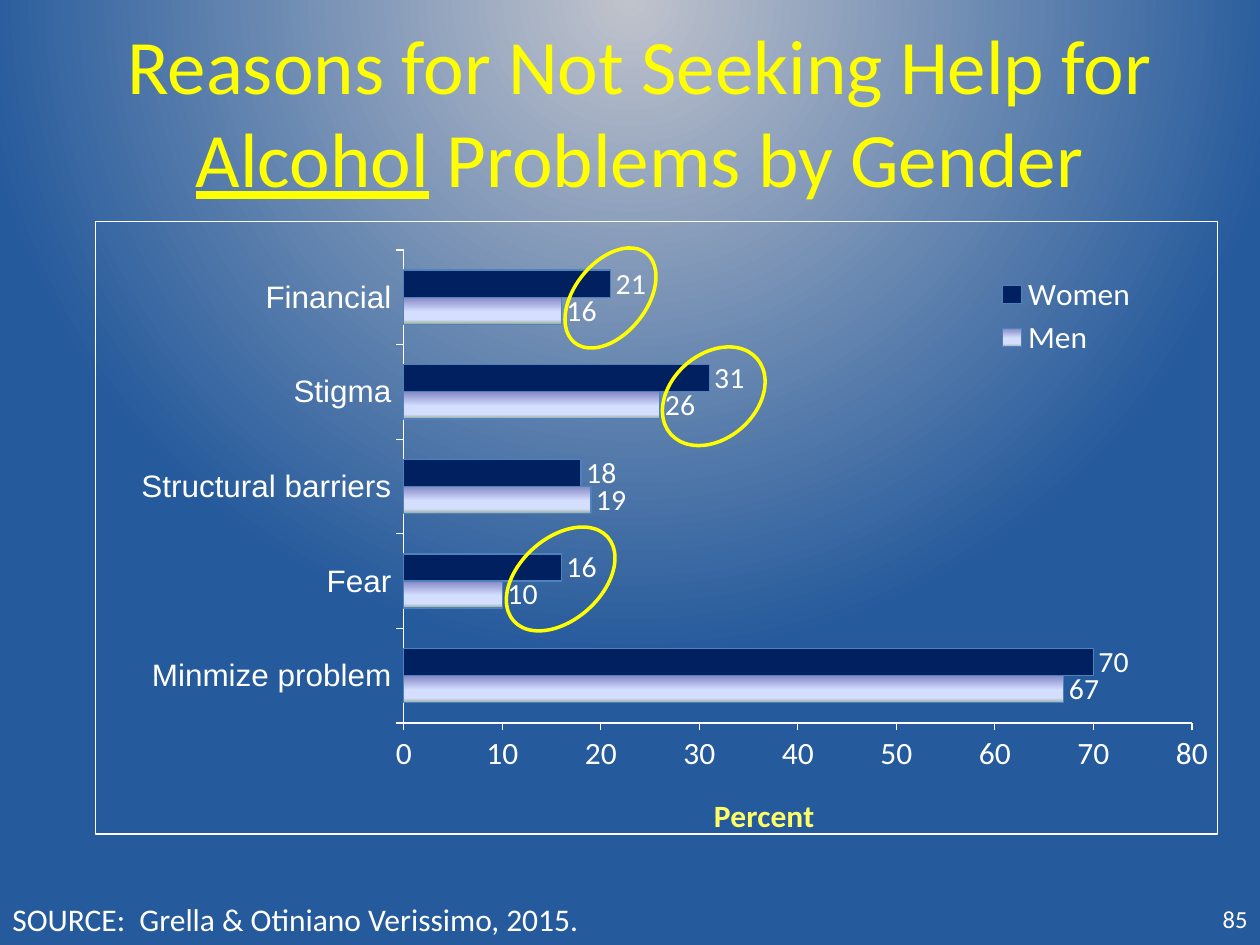
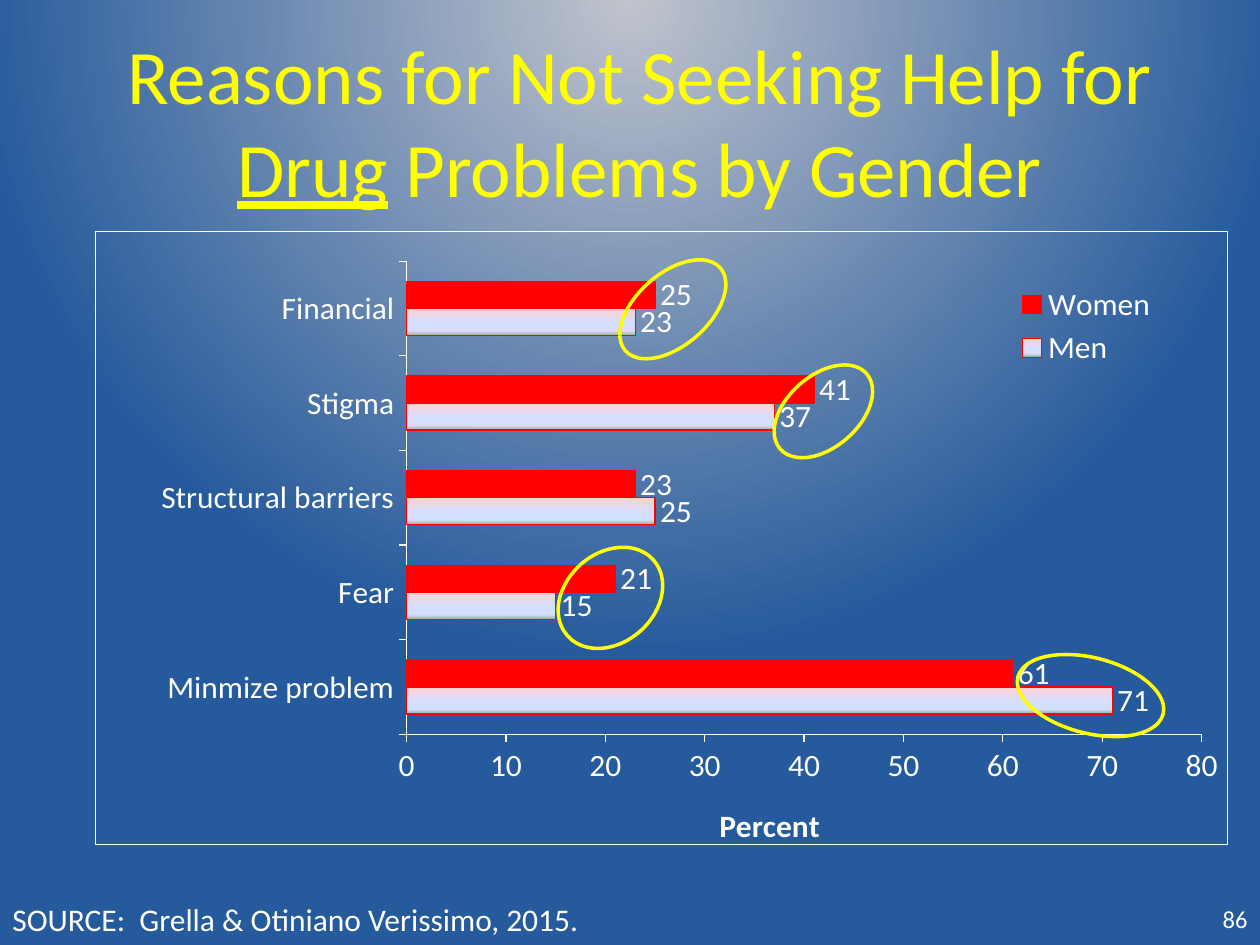
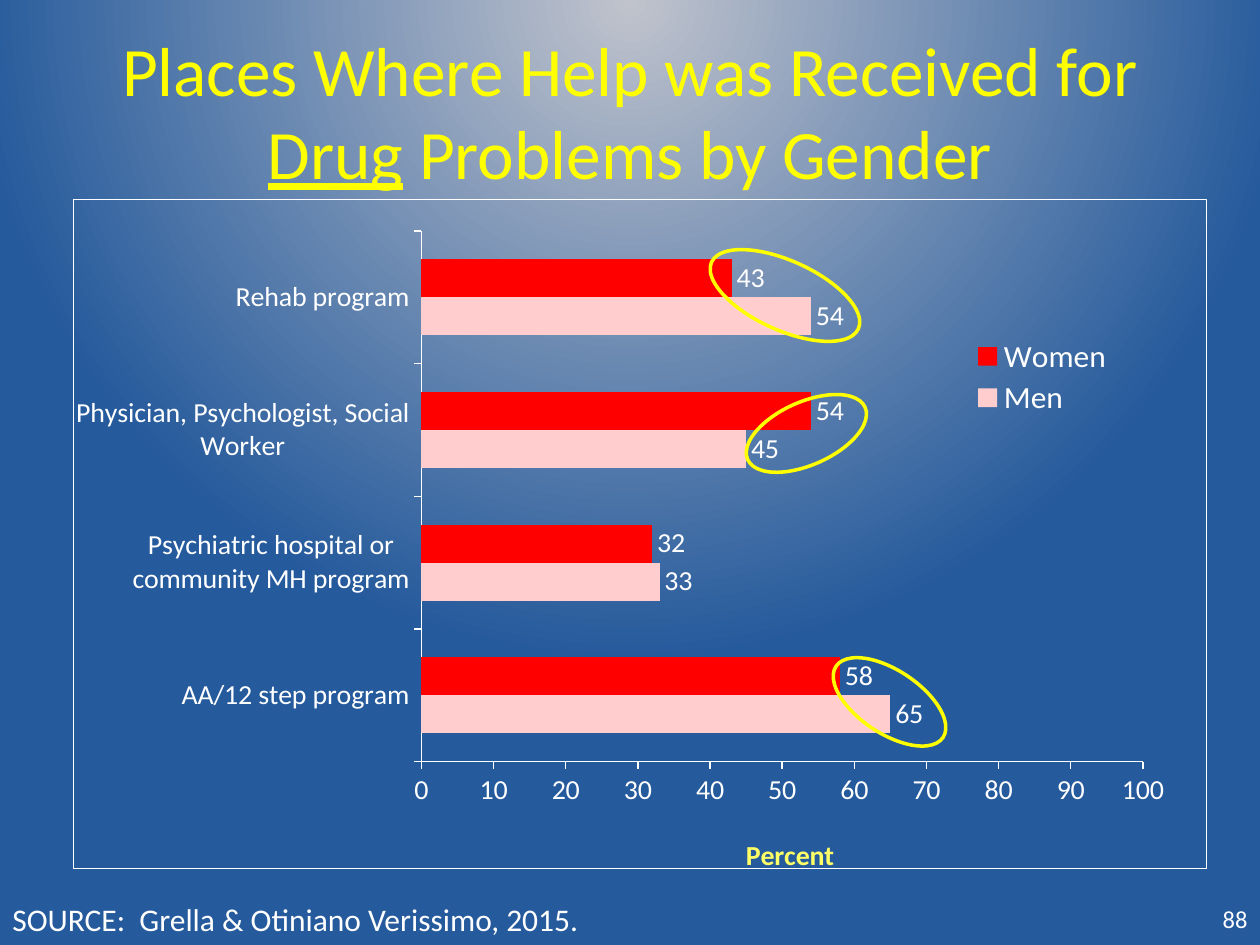
from lxml import etree
from pptx import Presentation
from pptx.chart.data import CategoryChartData
from pptx.dml.color import RGBColor
from pptx.enum.chart import XL_CHART_TYPE, XL_LABEL_POSITION, XL_LEGEND_POSITION, XL_TICK_MARK
from pptx.enum.shapes import MSO_SHAPE
from pptx.enum.text import MSO_ANCHOR, PP_ALIGN
from pptx.oxml import parse_xml
from pptx.oxml.ns import nsdecls, qn
from pptx.util import Inches, Pt

BAR_CLUSTERED = XL_CHART_TYPE.BAR_CLUSTERED
OUTSIDE_END = XL_LABEL_POSITION.OUTSIDE_END
LEGEND_RIGHT = XL_LEGEND_POSITION.RIGHT
TICK_OUTSIDE = XL_TICK_MARK.OUTSIDE
TICK_NONE = XL_TICK_MARK.NONE
ELLIPSE = MSO_SHAPE.OVAL
TOP, MIDDLE = MSO_ANCHOR.TOP, MSO_ANCHOR.MIDDLE
LEFT, CENTER, RIGHT = PP_ALIGN.LEFT, PP_ALIGN.CENTER, PP_ALIGN.RIGHT

COLORS = {
    "white": "FFFFFF",
    "yellow": "FFFF00",
    "pale_yellow": "FFFF66",
    "glow": "C0C3CC",
    "blue": "255A9C",
    "navy": "002060",
    "bar_edge": "4F81BD",
    "red": "FF0000",
    "pink": "FFCDCD",
    "violet": "8488C4",
    "rose": "FFD1D1",
    "lavender": "D4DEFF",
    "sage": "96AB94",
}
BACKGROUND_STOPS = [(0, "glow"), (84, "blue"), (100, "blue")]
RADIAL = (
    '<a:path {} path="circle"><a:fillToRect l="50000" t="-80000" r="50000" b="180000"/></a:path>'
)
VERTICAL = '<a:lin {} ang="5400000" scaled="1"/>'
SOURCE = "SOURCE:  Grella & Otiniano Verissimo, 2015."
REASONS = ["Minmize problem", "Fear", "Structural barriers", "Stigma", "Financial"]
PLACES = [
    "AA/12 step program",
    "Psychiatric hospital or community MH program",
    "Physician, Psychologist, Social Worker",
    "Rehab program",
]


def rgb(name):
    return RGBColor.from_string(COLORS[name])


def bar_stops(first):
    return [(0, first), (53, "lavender"), (83, "lavender"), (100, "sage")]


def paint_gradient(owner, stops, direction):
    gradient = owner.find(".//" + qn("a:gradFill"))
    for child in list(gradient):
        gradient.remove(child)
    stop_list = etree.SubElement(gradient, qn("a:gsLst"))
    for position, color in stops:
        stop = etree.SubElement(stop_list, qn("a:gs"), pos=str(position * 1000))
        etree.SubElement(stop, qn("a:srgbClr"), val=COLORS[color])
    gradient.append(parse_xml(direction.format(nsdecls("a"))))


def place(element, index, x, y, width=None, height=None, inner=False):
    for old in element.findall(qn("c:layout")):
        element.remove(old)
    layout = etree.Element(qn("c:layout"))
    manual = etree.SubElement(layout, qn("c:manualLayout"))
    settings = [("xMode", "edge"), ("yMode", "edge"), ("x", x), ("y", y), ("w", width), ("h", height)]
    if inner:
        settings.insert(0, ("layoutTarget", "inner"))
    for tag, value in settings:
        if value is not None:
            etree.SubElement(manual, qn("c:" + tag), val=str(value))
    element.insert(index, layout)


class Deck:
    font_name = "Calibri"

    def __init__(self):
        self.presentation = Presentation()
        self.presentation.slide_width = Inches(10)
        self.presentation.slide_height = Inches(7.5)
        self.slide = None

    def add_slide(self, number):
        self.slide = self.presentation.slides.add_slide(self.presentation.slide_layouts[6])
        self.slide.background.fill.gradient()
        paint_gradient(self.slide._element, BACKGROUND_STOPS, RADIAL)
        self.text((0, 7.09, 8.25, 0.4), [(SOURCE, False)], 18)
        self.text((7.67, 7.09, 2.33, 0.4), [(str(number), False)], 14, align=RIGHT, anchor=MIDDLE)

    def style_font(self, font, size, color="white", name=None):
        font.size = Pt(size)
        font.name = name or self.font_name
        font.color.rgb = rgb(color)

    def text(self, box, runs, size, color="white", align=LEFT, anchor=TOP):
        shape = self.slide.shapes.add_textbox(*map(Inches, box))
        frame = shape.text_frame
        frame.word_wrap = True
        frame.vertical_anchor = anchor
        paragraph = frame.paragraphs[0]
        paragraph.alignment = align
        for words, underlined in runs:
            run = paragraph.add_run()
            run.text = words
            self.style_font(run.font, size, color)
            run.font.underline = underlined

    def title(self, box, lead, topic, size=44):
        runs = [(lead, False), (topic, True), (" Problems by Gender", False)]
        self.text(box, runs, size, "yellow", CENTER, MIDDLE)

    def highlight(self, left, top, width, height, rotation):
        shape = self.slide.shapes.add_shape(ELLIPSE, *map(Inches, (left, top, width, height)))
        shape.rotation = rotation
        shape.shadow.inherit = False
        shape.fill.background()
        shape.line.color.rgb = rgb("yellow")
        shape.line.width = Pt(2)

    def bar_chart(self, box, categories, men, women, fills, plot, legend, caption,
                  edge=None, maximum=80, axis_size=18, label_size=18,
                  category_font=None, caption_color="pale_yellow"):
        data = CategoryChartData()
        data.categories = categories
        data.add_series("Men", men)
        data.add_series("Women", women)
        chart = self.slide.shapes.add_chart(BAR_CLUSTERED, *map(Inches, box), data).chart
        chart.has_title = False
        self.style_font(chart.font, 18)
        chart.plots[0].gap_width = 150
        chart.plots[0].vary_by_categories = False
        for series, fill in zip(chart.plots[0].series, fills):
            self.style_series(series, fill, edge, label_size)
        self.style_axis(chart.category_axis, axis_size, category_font)
        self.style_axis(chart.value_axis, axis_size)
        chart.value_axis.minimum_scale = 0
        chart.value_axis.maximum_scale = maximum
        chart.value_axis.major_unit = 10
        self.axis_caption(chart.value_axis, axis_size, caption_color, caption)
        chart.has_legend = True
        chart.legend.position = LEGEND_RIGHT
        chart.legend.include_in_layout = False
        self.style_font(chart.legend.font, 18)
        place(chart.legend._element, 1, *legend)
        chart_element = chart._chartSpace.find(qn("c:chart"))
        place(chart_element.find(qn("c:plotArea")), 0, *plot, inner=True)
        chart_element.addnext(parse_xml(
            f'<c:spPr {nsdecls("c", "a")}><a:noFill/><a:ln w="9525"><a:solidFill>'
            f'<a:srgbClr val="{COLORS["white"]}"/></a:solidFill></a:ln></c:spPr>'
        ))

    def style_series(self, series, fill, edge, label_size):
        series.invert_if_negative = False
        if isinstance(fill, list):
            series.format.fill.gradient()
            paint_gradient(series._element, fill, VERTICAL)
        else:
            series.format.fill.solid()
            series.format.fill.fore_color.rgb = rgb(fill)
        if edge:
            series.format.line.color.rgb = rgb(edge)
            series.format.line.width = Pt(0.75)
        else:
            series.format.line.fill.background()
        labels = series.data_labels
        labels.show_value = True
        labels.position = OUTSIDE_END
        self.style_font(labels.font, label_size)

    def style_axis(self, axis, size, name=None):
        axis.has_major_gridlines = False
        axis.major_tick_mark = TICK_OUTSIDE
        axis.minor_tick_mark = TICK_NONE
        axis.format.line.color.rgb = rgb("white")
        axis.format.line.width = Pt(0.75)
        self.style_font(axis.tick_labels.font, size, name=name)

    def axis_caption(self, axis, size, color, position):
        axis.has_title = True
        run = axis.axis_title.text_frame.paragraphs[0].add_run()
        run.text = "Percent"
        self.style_font(run.font, size, color)
        run.font.bold = True
        place(axis.axis_title._element, 1, *position)


def add_alcohol_reasons(deck):
    deck.add_slide(85)
    deck.title((0.58, 0.25, 9, 1.25), "Reasons for Not Seeking Help for ", "Alcohol")
    deck.bar_chart(
        (0.75, 1.75, 8.92, 4.95), REASONS, (67, 10, 19, 26, 16), (70, 16, 18, 31, 21),
        (bar_stops("violet"), "navy"), plot=(0.275, 0.047, 0.702, 0.772),
        legend=(0.79, 0.08, 0.15, 0.15), caption=(0.546, 0.925),
        edge="bar_edge", label_size=17, category_font="Arial",
    )
    deck.highlight(4.39, 2.08, 0.91, 0.57, 308.7)
    deck.highlight(3.95, 4.27, 1, 0.65, 318.2)
    deck.highlight(5.21, 2.81, 0.91, 0.67, 318.9)


def add_drug_reasons(deck):
    deck.add_slide(86)
    deck.title((0.58, 0.33, 9, 1.25), "Reasons for Not Seeking Help for ", "Drug")
    deck.bar_chart(
        (0.75, 1.83, 9, 4.95), REASONS, (71, 15, 25, 37, 23), (61, 21, 23, 41, 25),
        (bar_stops("rose"), "red"), plot=(0.275, 0.049, 0.702, 0.772),
        legend=(0.8, 0.08, 0.15, 0.15), caption=(0.546, 0.925),
        edge="red", caption_color="white",
    )
    deck.highlight(6.08, 2.98, 0.91, 0.57, 318.9)
    deck.highlight(4.39, 4.39, 0.91, 0.71, 318.9)
    deck.highlight(8.06, 5.22, 1.19, 0.6, 194.3)
    deck.highlight(4.84, 2.17, 1, 0.57, 318.9)


def add_drug_places(deck):
    deck.add_slide(88)
    deck.title((0.75, 0.25, 8.5, 1.25), "Places Where Help was Received for ", "Drug", 39.6)
    deck.bar_chart(
        (0.58, 1.58, 9, 5.42), PLACES, (65, 33, 45, 54), (58, 32, 54, 43),
        ("pink", "red"), plot=(0.307, 0.047, 0.637, 0.793),
        legend=(0.78, 0.2, 0.15, 0.13), caption=(0.589, 0.945),
        maximum=100, axis_size=16, label_size=16,
    )
    deck.highlight(5.59, 2.07, 1.28, 0.55, 204.4)
    deck.highlight(5.89, 3.19, 1.02, 0.5, 336)
    deck.highlight(6.55, 5.32, 1.02, 0.5, 213.6)


def main():
    deck = Deck()
    add_alcohol_reasons(deck)
    add_drug_reasons(deck)
    add_drug_places(deck)
    deck.presentation.save("out.pptx")


if __name__ == "__main__":
    main()
